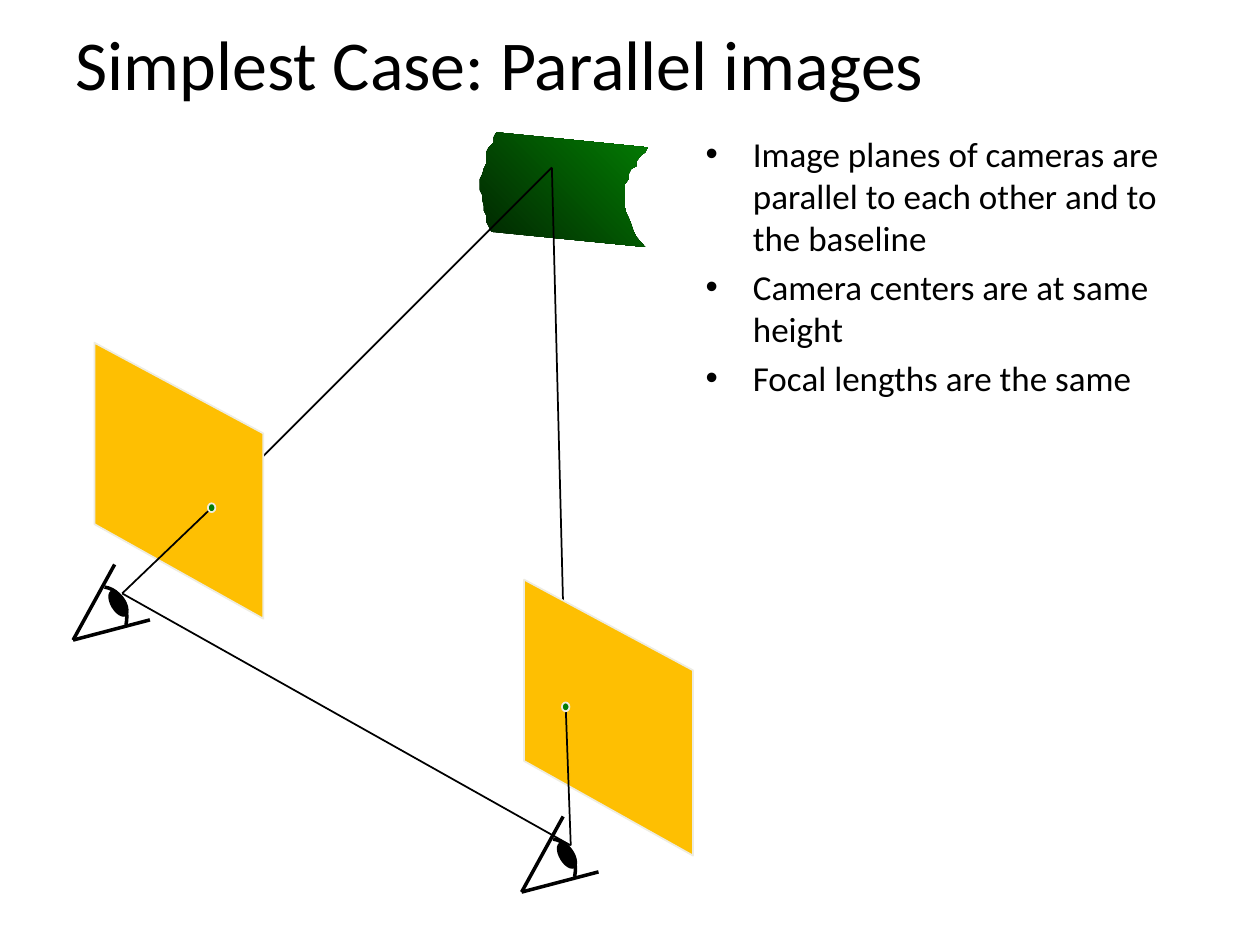
import lxml.etree
import pptx
import pptx.dml.color
import pptx.enum.shapes
import pptx.enum.text
import pptx.oxml.ns
import pptx.util

SCALE = 9144
BLACK, AMBER, GREEN, PALE = "000000", "FEBF02", "037C03", "EEECE1"
SURFACE = [
    (394, 105), (392, 109), (392, 113), (388, 117), (386, 121), (386, 130),
    (384, 134), (383, 138), (381, 142), (381, 151), (383, 155), (383, 159),
    (384, 163), (384, 167), (386, 171), (386, 176), (388, 180), (390, 184),
    (512, 196), (505, 188), (503, 184), (501, 178), (499, 173), (497, 169),
    (496, 165), (496, 146), (499, 142), (499, 138), (501, 134), (505, 132),
    (505, 128), (509, 123), (512, 121), (514, 117),
]
LEFT_CAMERA, RIGHT_CAMERA, SCENE_POINT = (97, 471), (453, 671), (438, 133)
LEFT_PIXEL, RIGHT_PIXEL = (168, 403), (449, 561)


def px(length):
    return pptx.util.Emu(round(length * SCALE))


def rgb(value):
    return pptx.dml.color.RGBColor.from_string(value)


def bezier(start, first, second, end, steps=12):
    points = []
    for step in range(steps + 1):
        t = step / steps
        weights = ((1 - t) ** 3, 3 * t * (1 - t) ** 2, 3 * t * t * (1 - t), t ** 3)
        corners = zip(*(start, first, second, end))
        points.append(tuple(sum(w * c for w, c in zip(weights, axis)) for axis in corners))
    return points


class SlideBuilder:
    """Draws styled elements on the current slide."""

    font = "Calibri"

    def __init__(self, slide):
        self.slide = slide

    def text(self, placeholder, box, lines, size):
        placeholder.left, placeholder.top, placeholder.width, placeholder.height = map(px, box)
        frame = placeholder.text_frame
        frame.text = "\n".join(lines)
        frame.auto_size = pptx.enum.text.MSO_AUTO_SIZE.NONE
        for paragraph in frame.paragraphs:
            paragraph.alignment = pptx.enum.text.PP_ALIGN.LEFT
            for run in paragraph.runs:
                run.font.name = self.font
                run.font.size = pptx.util.Pt(size)
                run.font.color.rgb = rgb(BLACK)
        return frame

    def title(self, box, line):
        frame = self.text(self.slide.shapes.title, box, [line], 40)
        frame.vertical_anchor = pptx.enum.text.MSO_ANCHOR.MIDDLE

    def bullets(self, box, lines):
        frame = self.text(self.slide.placeholders[1], box, lines, 20)
        indent = px(37.5)
        for paragraph in frame.paragraphs:
            properties = paragraph._p.get_or_add_pPr()
            properties.set("marL", str(indent))
            properties.set("indent", str(-indent))
            bullet = lxml.etree.SubElement(properties, pptx.oxml.ns.qn("a:buChar"))
            bullet.set("char", "•")

    def style(self, shape, fill, line, width):
        shape.shadow.inherit = False
        if fill:
            shape.fill.solid()
            shape.fill.fore_color.rgb = rgb(fill)
        else:
            shape.fill.background()
        if line:
            shape.line.color.rgb = rgb(line)
            shape.line.width = pptx.util.Pt(width)
        else:
            shape.line.fill.background()

    def line(self, start, end, width=1):
        connector = self.slide.shapes.add_connector(
            pptx.enum.shapes.MSO_CONNECTOR.STRAIGHT, *map(px, start + end))
        connector.line.color.rgb = rgb(BLACK)
        connector.line.width = pptx.util.Pt(width)
        lxml.etree.SubElement(connector._element.spPr, pptx.oxml.ns.qn("a:effectLst"))

    def outline(self, points, fill=None, line=None, width=1, close=True):
        corners = [(px(x), px(y)) for x, y in points]
        builder = self.slide.shapes.build_freeform(*corners[0])
        builder.add_line_segments(corners[1:], close=close)
        shape = builder.convert_to_shape()
        self.style(shape, fill, line, width)
        return shape

    def gradient(self, points, colors, angle):
        fill = self.outline(points).fill
        fill.gradient()
        fill.gradient_angle = angle
        for position, (stop, color) in enumerate(zip(fill.gradient_stops, colors)):
            stop.position = position
            stop.color.rgb = rgb(color)

    def ellipse(self, center, size, fill, line, rotation=0):
        (x, y), (width, height) = center, size
        shape = self.slide.shapes.add_shape(
            pptx.enum.shapes.MSO_SHAPE.OVAL,
            *map(px, (x - width / 2, y - height / 2, width, height)))
        shape.rotation = rotation
        self.style(shape, fill, line, 1)

    def image_plane(self, x, y):
        corners = [(x, y), (x + 134, y + 72), (x + 134, y + 219), (x, y + 144)]
        self.outline(corners, AMBER, PALE)

    def eye(self, x, y):
        corner = (x, y)
        cornea = bezier((x + 25, y - 42), (x + 38, y - 40), (x + 45, y - 26), (x + 42, y - 12))
        self.outline(cornea, line=BLACK, width=2, close=False)
        self.line((x + 33, y - 60), corner, 2)
        self.ellipse((x + 36, y - 29), (11, 22), BLACK, BLACK, 329)
        self.line(corner, (x + 61, y - 16), 2)


def main():
    presentation = pptx.Presentation()
    presentation.slide_width, presentation.slide_height = px(1000), px(750)
    builder = SlideBuilder(presentation.slides.add_slide(presentation.slide_layouts[1]))
    builder.title((50, 0, 900, 100), "Simplest Case: Parallel images")
    builder.bullets((550, 100, 417, 575), [
        "Image planes of cameras are parallel to each other and to the baseline",
        "Camera centers are at same height",
        "Focal lengths are the same",
    ])
    builder.gradient(SURFACE, ("012501", GREEN), 45)
    builder.line(LEFT_CAMERA, RIGHT_CAMERA)
    views = [
        (LEFT_CAMERA, LEFT_PIXEL, (75, 272), (58, 508)),
        (RIGHT_CAMERA, RIGHT_PIXEL, (416, 460), (414, 708)),
    ]
    for camera, pixel, plane, eye in views:
        builder.line(pixel, SCENE_POINT)
        builder.image_plane(*plane)
        builder.line(camera, pixel)
        builder.eye(*eye)
        builder.ellipse(pixel, (6, 7), GREEN, PALE)
    presentation.save("out.pptx")


if __name__ == "__main__":
    main()
